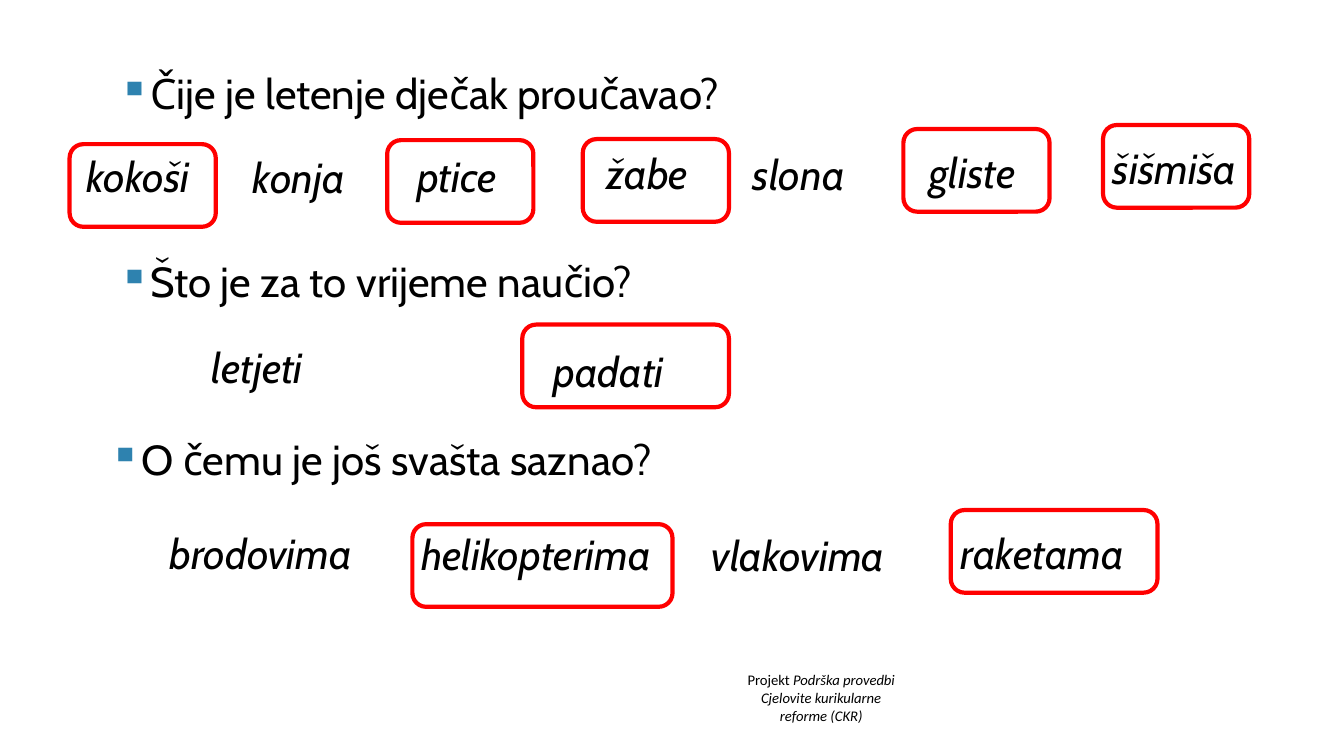
from pptx import Presentation, util as u
from pptx.dml.color import RGBColor
from pptx.enum import shapes, text
from pptx.oxml import parse_xml
from pptx.oxml.ns import nsdecls

PX = 9144
BODY = {"name": "Cabin", "size": u.Pt(30), "italic": False}
ANSWER = {**BODY, "italic": True}
FOOTER = {"name": "Calibri", "size": u.Pt(10.5), "italic": False}
FOOTER_TITLE = {**FOOTER, "italic": True}


def add_text(left, top, width, height=60):
    box = slide.shapes.add_textbox(*(value * PX for value in (left, top, width, height)))
    frame = box.text_frame
    frame.word_wrap = True
    frame.vertical_anchor = text.MSO_ANCHOR.TOP
    return frame


def add_run(paragraph, words, font_format):
    run = paragraph.add_run()
    run.text = words
    for name, value in font_format.items():
        setattr(run.font, name, value)
    run.font.color.rgb = RGBColor.from_string("000000")


presentation = Presentation()
presentation.slide_width = 1333 * PX
presentation.slide_height = 750 * PX
slide = presentation.slides.add_slide(presentation.slide_layouts[6])

footer = add_text(699, 661, 231, 63)
project = footer.paragraphs[0]
add_run(project, "Projekt ", FOOTER)
add_run(project, "Podrška provedbi", FOOTER_TITLE)
reform = footer.add_paragraph()
add_run(reform, "Cjelovite kurikularne", FOOTER_TITLE)
reform.add_line_break()
add_run(reform, "reforme (CKR)", FOOTER_TITLE)
for paragraph in footer.paragraphs:
    paragraph.alignment = text.PP_ALIGN.CENTER

questions = [
    ("Čije je letenje dječak proučavao?", 108, 68, 999),
    ("Što je za to vrijeme naučio?", 108, 254, 860),
    ("O čemu je još svašta saznao?", 99, 431, 860),
]
for words, left, top, width in questions:
    paragraph = add_text(left, top, width).paragraphs[0]
    paragraph.line_spacing = 0.9
    properties = paragraph._p.get_or_add_pPr()
    properties.set("marL", str(25 * PX))
    properties.set("indent", str(-25 * PX))
    for bullet in (
        '<a:buClr {}><a:srgbClr val="2E82AF"/></a:buClr>',
        '<a:buChar {} char="▪"/>',
    ):
        properties.append(parse_xml(bullet.format(nsdecls("a"))))
    add_run(paragraph, words, BODY)

answers = [
    ("kokoši", 76, 150, 163),
    ("konja", 241, 151, 142),
    ("ptice", 404, 150, 139),
    ("žabe", 592, 147, 124),
    ("slona", 737, 148, 163),
    ("gliste", 912, 146, 163),
    ("šišmiša", 1094, 142, 163),
    ("letjeti", 200, 340, 255),
    ("padati", 539, 344, 165),
    ("brodovima", 158, 524, 246),
    ("helikopterima", 408, 525, 270),
    ("vlakovima", 696, 526, 246),
    ("raketama", 943, 524, 246),
]
for words, left, top, width in answers:
    paragraph = add_text(left, top, width).paragraphs[0]
    paragraph.line_spacing = 0.9
    add_run(paragraph, words, ANSWER)

correct_frames = [
    (69, 143, 145),
    (384, 139, 145),
    (578, 138, 145),
    (896, 128, 145),
    (1094, 124, 145),
    (518, 322, 205),
    (409, 520, 258),
    (943, 506, 205),
]
for left, top, width in correct_frames:
    shape = slide.shapes.add_shape(
        shapes.MSO_SHAPE.ROUNDED_RECTANGLE, left * PX, top * PX, width * PX, 82 * PX
    )
    shape.shadow.inherit = False
    shape.fill.background()
    shape.line.color.rgb = RGBColor.from_string("FF0000")
    shape.line.width = u.Pt(3)

presentation.save("out.pptx")
